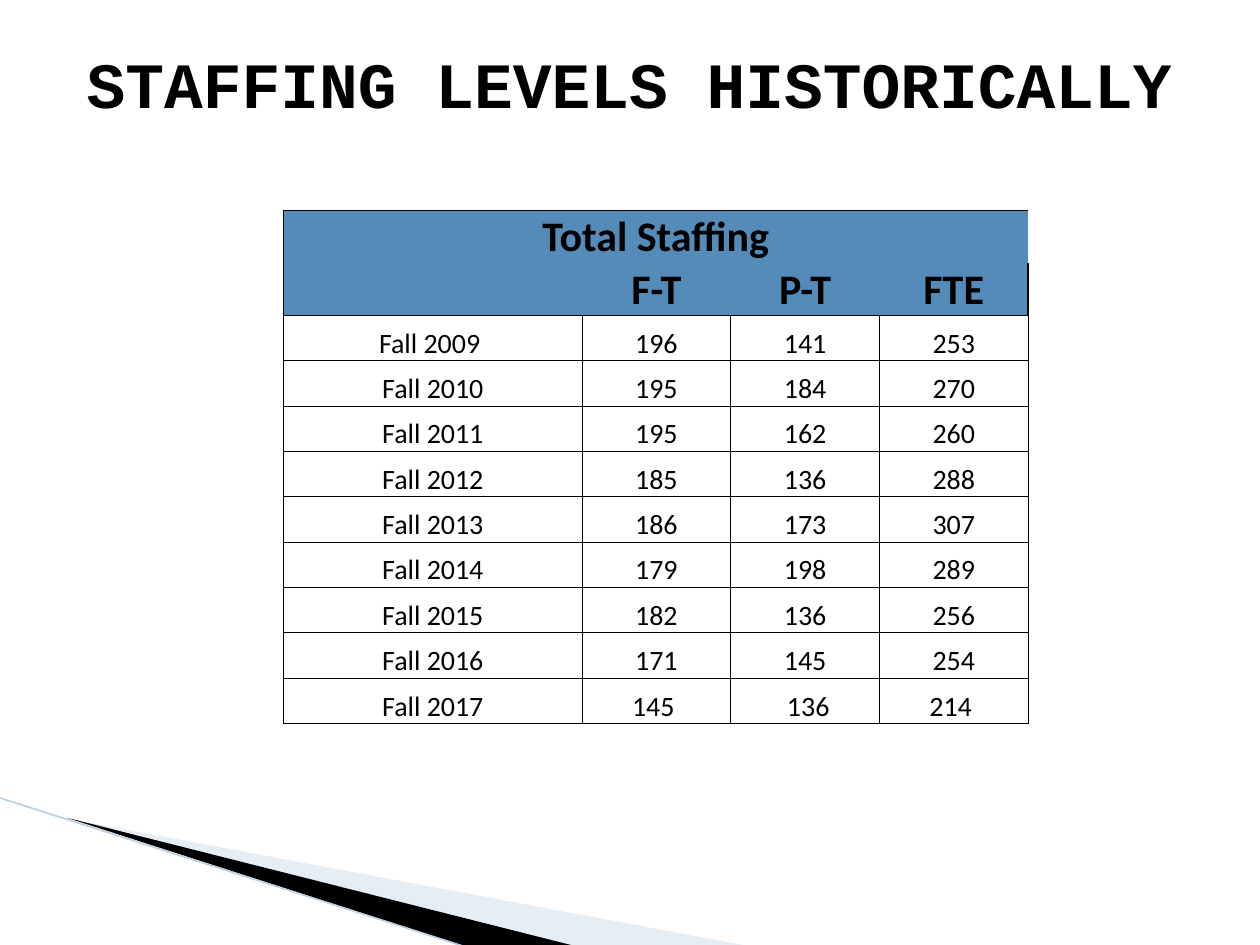
"""Build the slide on historical staffing levels."""
from pptx import Presentation
from pptx import util as u
from pptx.dml.color import RGBColor
from pptx.enum import shapes, text
from pptx.oxml import parse_xml
from pptx.oxml.ns import nsdecls
from lxml import etree

TITLE = "STAFFING LEVELS HISTORICALLY"
ROWS = [
    ("Total Staffing", "", "", ""),
    ("", "F-T", "P-T", "FTE"),
    ("Fall 2009 ", "196", "141", "253"),
    ("Fall 2010", "195", "184", "270"),
    ("Fall 2011", "195", "162", "260"),
    ("Fall 2012", "185", "136", "288"),
    ("Fall 2013", "186", "173", "307"),
    ("Fall 2014", "179", "198", "289"),
    ("Fall 2015", "182", "136", "256"),
    ("Fall 2016", "171", "145", "254"),
    ("Fall 2017", "145 ", " 136", "214 "),
]
HEADS = 2
COLS = (2.37, 1.18, 1.18, 1.18)
HIGHS = [0.36, 0.38] + [0.36] * 9
THEME = {
    "ink": "000000", "head": "558BB8", "pale": "C0D3E6", "edge": "BBD0E3",
    "title": ("Courier New", 36.9, True),
    "top": ("Calibri", 24, True),
    "body": ("Calibri", 16, False),
}
WEDGES = [
    ("pale", 40, [(0.55, 6.5), (5.95, 7.51), (4.56, 7.51)]),
    ("ink", 100, [(0.53, 6.49), (4.57, 7.51), (3.72, 7.52)]),
]
EDGE = (-0.01, 6.33, 3.71, 7.52)


def hue(name):
    return RGBColor.from_string(THEME[name])


def style(para, name):
    para.alignment = text.PP_ALIGN.CENTER
    font = para.font
    face, size, font.bold = THEME[name]
    font.name, font.size = face, u.Pt(size)
    font.color.rgb = hue("ink")


def wedge(slide, name, alpha, points):
    spots = [(u.Inches(x), u.Inches(y)) for x, y in points]
    form = slide.shapes.build_freeform(*spots[0], scale=1.0)
    form.add_line_segments(spots[1:], close=True)
    shape = form.convert_to_shape()
    shape.shadow.inherit = False
    shape.fill.solid()
    shape.fill.fore_color.rgb = hue(name)
    shape.line.fill.background()
    if alpha < 100:
        tint = shape.fill._xPr.find(".//{*}srgbClr")
        etree.SubElement(tint, tint.tag.replace("srgbClr", "alpha"), val=str(alpha * 1000))


def border(cell, sides):
    props = cell._tc.get_or_add_tcPr()
    for side, wide in zip("LRTB", sides):
        ink = f'<a:solidFill><a:srgbClr val="{THEME["ink"]}"/></a:solidFill>'
        props.append(parse_xml(
            f'<a:ln{side} {nsdecls("a")} w="{u.Pt(wide)}">'
            f'{ink if wide else "<a:noFill/>"}</a:ln{side}>'))


def sides(row, col):
    if row >= HEADS:
        return 0.5, 0.5, 1 if row == HEADS else 0.5, 0.5
    return (int(col == 0), int(col == len(COLS) - 1),
            int(row == 0), int(row == HEADS - 1))


def grid(slide):
    frame = slide.shapes.add_table(
        len(ROWS), len(COLS), u.Inches(2.25), u.Inches(1.67),
        u.Inches(sum(COLS)), u.Inches(sum(HIGHS)))
    table = frame.table
    table.first_row = table.horz_banding = False
    for col, wide in zip(table.columns, COLS):
        col.width = u.Inches(wide)
    for row, high in zip(table.rows, HIGHS):
        row.height = u.Inches(high)
    for r, row in enumerate(ROWS):
        for c, word in enumerate(row):
            cell = table.cell(r, c)
            cell.text = word
            cell.vertical_anchor = text.MSO_ANCHOR.BOTTOM
            cell.margin_left = cell.margin_right = cell.margin_top = u.Inches(0.01)
            cell.margin_bottom = 0
            style(cell.text_frame.paragraphs[0], "top" if r < HEADS else "body")
            border(cell, sides(r, c))
            if r < HEADS:
                cell.fill.solid()
                cell.fill.fore_color.rgb = hue("head")
            else:
                cell.fill.background()
    table.cell(0, 0).merge(table.cell(0, len(COLS) - 1))


def main():
    deck = Presentation()
    deck.slide_width, deck.slide_height = u.Inches(10), u.Inches(7.5)
    slide = deck.slides.add_slide(deck.slide_layouts[6])
    for item in WEDGES:
        wedge(slide, *item)
    edge = slide.shapes.add_connector(
        shapes.MSO_CONNECTOR.STRAIGHT, *map(u.Inches, EDGE))
    edge.line.color.rgb = hue("edge")
    edge.line.width = u.Pt(0.95)
    edge._element.spPr.append(parse_xml(f'<a:effectLst {nsdecls("a")}/>'))
    grid(slide)
    box = slide.shapes.add_textbox(*map(u.Inches, (0.5, 0.3, 9, 1.25)))
    box.text_frame.word_wrap = True
    box.text_frame.text = TITLE
    style(box.text_frame.paragraphs[0], "title")
    deck.save("out.pptx")


if __name__ == "__main__":
    main()
